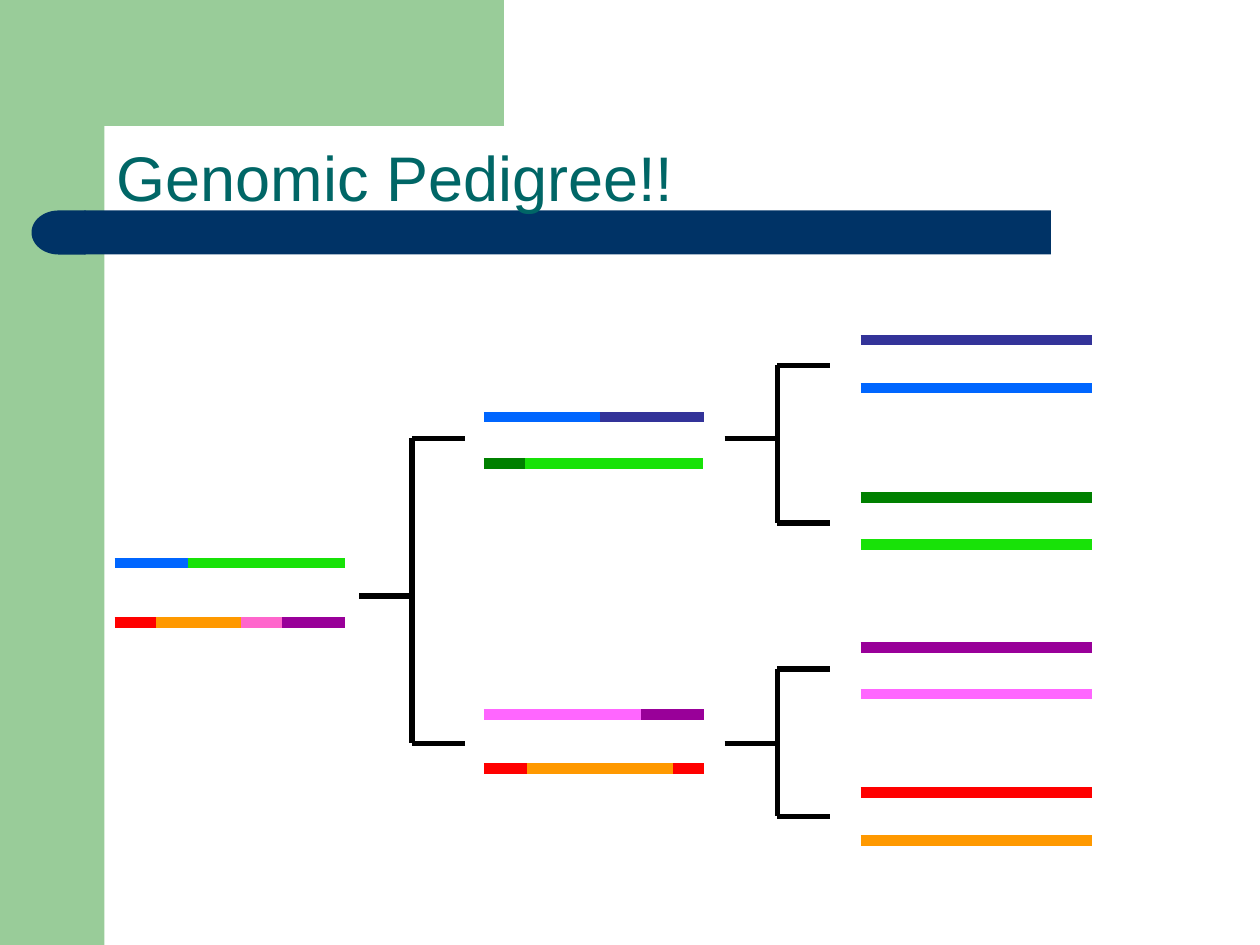
"""Build the Genomic Pedigree slide: a three-generation tree of coloured chromosomes."""
import math

import lxml.etree
import pptx
import pptx.dml.color
import pptx.enum.shapes
import pptx.enum.text
import pptx.oxml.ns
import pptx.util

Inches = pptx.util.Inches
SHAPES = pptx.enum.shapes.MSO_SHAPE


def paint(fmt, color):
    if hasattr(fmt, "solid"):
        fmt.solid()
        fmt.fore_color.rgb = pptx.dml.color.RGBColor.from_string(color)
    else:
        fmt.rgb = pptx.dml.color.RGBColor.from_string(color)


def draw_line(x1, y1, x2, y2, color, width):
    line = slide.shapes.add_connector(
        pptx.enum.shapes.MSO_CONNECTOR.STRAIGHT,
        Inches(x1), Inches(y1), Inches(x2), Inches(y2))
    paint(line.line.fill, color)
    line.line.width = pptx.util.Pt(width)
    properties = line._element.spPr
    lxml.etree.SubElement(properties, pptx.oxml.ns.qn("a:effectLst"))


GREEN_PANEL, NAVY, TEAL, BLACK = "99CC99", "003366", "006666", "000000"
INDIGO, BLUE, DARK_GREEN, LIME = "333399", "0066FF", "008000", "18E208"
PURPLE, PINK, ROSE, RED, ORANGE = "990099", "FF66FF", "FF66CC", "FF0000", "FF9900"

presentation = pptx.Presentation()
presentation.slide_width = Inches(10)
presentation.slide_height = Inches(7.5)
slide = presentation.slides.add_slide(presentation.slide_layouts[6])

side_panel = slide.shapes.add_shape(
    SHAPES.RECTANGLE, 0, 0, Inches(0.83), Inches(7.5))
corner_arc = [
    (1.16 - 0.33 * math.sin(math.radians(angle)),
     1.16 - 0.33 * math.cos(math.radians(angle)))
    for angle in range(0, 91, 10)
]
corner_outline = slide.shapes.build_freeform(3.5, 0, scale=Inches(1))
corner_outline.add_line_segments(
    [(3.5, 0.83), *corner_arc, (0.83, 1.28), (0.5, 1.28), (0.5, 0)])
corner = corner_outline.convert_to_shape()
title_bar = slide.shapes.add_shape(
    SHAPES.RECTANGLE, Inches(0.67), Inches(1.67), Inches(7.67), Inches(0.35))
bar_cap = slide.shapes.add_shape(
    SHAPES.FLOWCHART_DELAY, Inches(0.25), Inches(1.67), Inches(0.43), Inches(0.35))
bar_cap.rotation = 180

for decoration, color in [(side_panel, GREEN_PANEL), (corner, GREEN_PANEL),
                          (title_bar, NAVY), (bar_cap, NAVY)]:
    paint(decoration.fill, color)
    decoration.line.fill.background()
    decoration.shadow.inherit = False

title = slide.shapes.add_textbox(
    Inches(0.83), Inches(0.5), Inches(8.67), Inches(1.25))
title.text_frame.word_wrap = True
title.text_frame.vertical_anchor = pptx.enum.text.MSO_ANCHOR.BOTTOM
title.text_frame.text = "Genomic Pedigree!!"
title_font = title.text_frame.paragraphs[0].runs[0].font
title_font.name = "Arial"
title_font.size = pptx.util.Pt(36)
paint(title_font.color, TEAL)

chromosomes = [
    (2.7, 6.83, [(INDIGO, 8.67)]),
    (3.08, 6.83, [(BLUE, 8.67)]),
    (3.95, 6.83, [(DARK_GREEN, 8.67)]),
    (4.32, 6.83, [(LIME, 8.67)]),
    (5.14, 6.83, [(PURPLE, 8.67)]),
    (5.51, 6.83, [(PINK, 8.67)]),
    (6.29, 6.83, [(RED, 8.67)]),
    (6.67, 6.83, [(ORANGE, 8.67)]),
    (3.31, 3.84, [(BLUE, 4.76), (INDIGO, 5.59)]),
    (3.68, 3.84, [(DARK_GREEN, 4.17), (LIME, 5.58)]),
    (5.67, 3.84, [(PINK, 5.09), (PURPLE, 5.59)]),
    (6.1, 3.84, [(RED, 4.18), (ORANGE, 5.34), (RED, 5.59)]),
    (4.47, 0.91, [(BLUE, 1.49), (LIME, 2.74)]),
    (4.94, 0.91, [(RED, 1.24), (ORANGE, 1.91), (ROSE, 2.24), (PURPLE, 2.74)]),
]
for y, start, segments in chromosomes:
    for color, end in segments:
        draw_line(start, y, end, y, color, 6)
        start = end

ARM = 0.42
brackets = [(3.27, 3.48, 4.73, 5.9), (6.17, 2.9, 3.48, 4.15), (6.17, 5.31, 5.9, 6.48)]
for x, top, child, bottom in brackets:
    draw_line(x, top, x, bottom, BLACK, 3)
    draw_line(x - ARM, child, x, child, BLACK, 3)
    for parent in (top, bottom):
        draw_line(x, parent, x + ARM, parent, BLACK, 3)

presentation.save("out.pptx")
